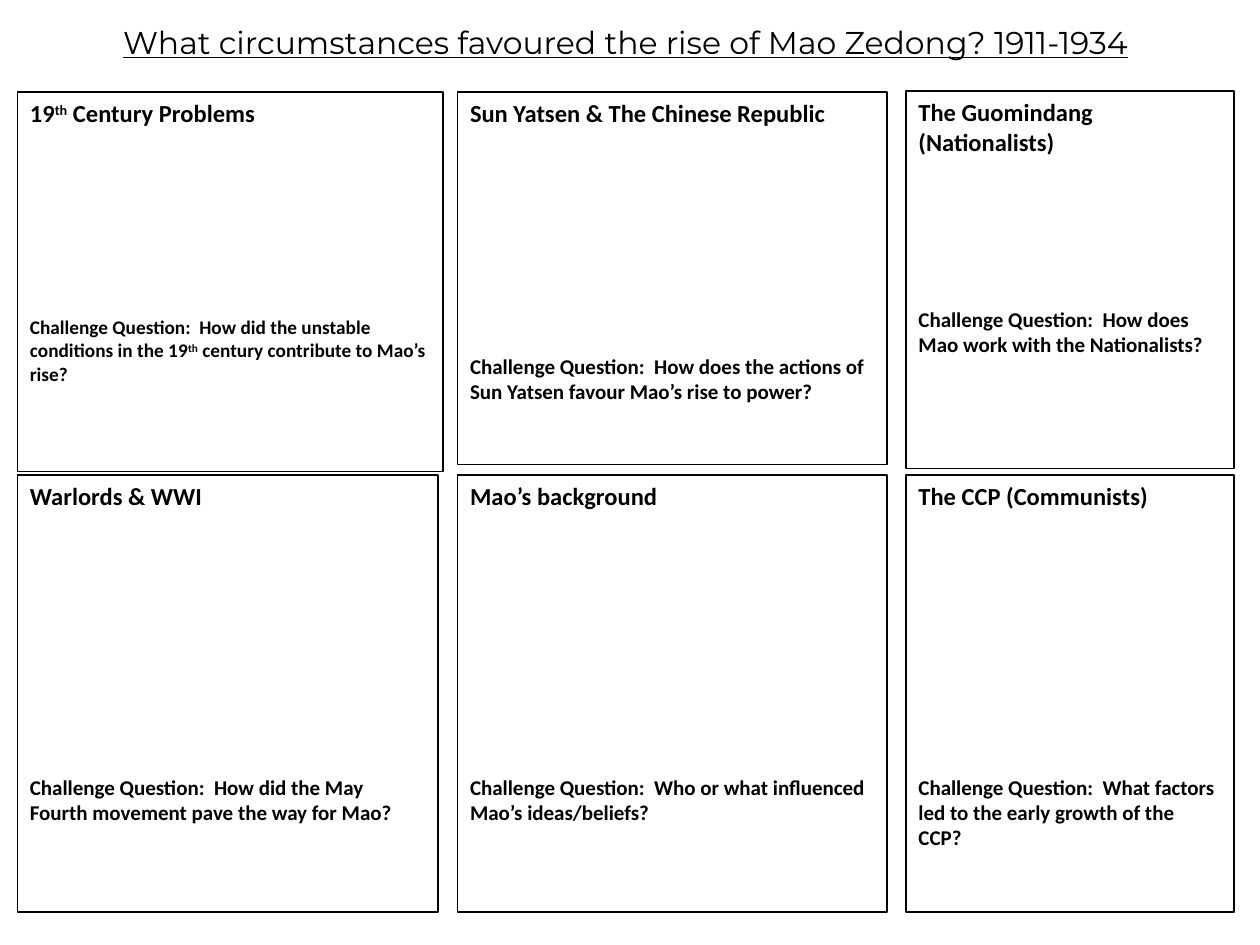
from pptx import Presentation
from pptx.dml.color import RGBColor
from pptx.enum.shapes import MSO_SHAPE as Shape
from pptx.enum.text import MSO_ANCHOR as Anchor, MSO_AUTO_SIZE as AutoSize, PP_ALIGN as Align
from pptx.util import Pt

BLACK = RGBColor(0x00, 0x00, 0x00)
WHITE = RGBColor(0xFF, 0xFF, 0xFF)
NOTE_LINE = 21.5

TOP_ROW, BOTTOM_ROW = 52.5, 271.5
LEFT_COL, MIDDLE_COL, RIGHT_COL = 10, 261.5, 517.75
MIDDLE_WIDTH, RIGHT_WIDTH = 245.5, 187.25
BOTTOM_HEIGHT = 249.75


def add_paragraph_text(paragraph, text, size):
    paragraph.alignment = Align.LEFT
    paragraph.font.name = "Calibri"
    paragraph.font.size = Pt(size)
    paragraph.font.bold = True
    paragraph.font.color.rgb = BLACK
    for index, part in enumerate(text.split("^")):
        run = paragraph.add_run()
        run.text = part
        if index % 2:
            run._r.get_or_add_rPr().set("baseline", "30000")


prs = Presentation()
prs.slide_width, prs.slide_height = Pt(720), Pt(540)
slide = prs.slides.add_slide(prs.slide_layouts[5])

title = slide.shapes.title
title.left, title.top, title.width, title.height = Pt(10), Pt(9.5), Pt(695), Pt(29)
title.text_frame.text = "What circumstances favoured the rise of Mao Zedong? 1911-1934"
title.text_frame.vertical_anchor = Anchor.TOP
title.text_frame.auto_size = AutoSize.NONE
heading_line = title.text_frame.paragraphs[0]
heading_line.alignment = Align.CENTER
heading_line.font.name = "Montserrat"
heading_line.font.size = Pt(18)
heading_line.font.underline = True
heading_line.font.color.rgb = BLACK

topics = [
    (LEFT_COL, TOP_ROW, 243, 217, "19^th^ Century Problems", 5, 11,
     "How did the unstable conditions in the 19^th^ century contribute to Mao’s rise?"),
    (MIDDLE_COL, TOP_ROW, MIDDLE_WIDTH, 213, "Sun Yatsen & The Chinese Republic", 6, 12,
     "How does the actions of Sun Yatsen favour Mao’s rise to power?"),
    (RIGHT_COL, TOP_ROW - 0.5, RIGHT_WIDTH, 215.75, "The Guomindang (Nationalists)", 4, 12,
     "How does Mao work with the Nationalists?"),
    (LEFT_COL, BOTTOM_ROW, 240.5, BOTTOM_HEIGHT, "Warlords & WWI", 7, 12,
     "How did the May Fourth movement pave the way for Mao?"),
    (MIDDLE_COL, BOTTOM_ROW, MIDDLE_WIDTH, BOTTOM_HEIGHT, "Mao’s background", 7, 12,
     "Who or what influenced Mao’s ideas/beliefs?"),
    (RIGHT_COL, BOTTOM_ROW, RIGHT_WIDTH, BOTTOM_HEIGHT, "The CCP (Communists)", 7, 12,
     "What factors led to the early growth of the CCP?"),
]

for left, top, width, height, heading, note_lines, question_size, question in topics:
    box = slide.shapes.add_shape(Shape.RECTANGLE, Pt(left), Pt(top), Pt(width), Pt(height))
    box.shadow.inherit = False
    box.fill.solid()
    box.fill.fore_color.rgb = WHITE
    box.line.color.rgb = BLACK
    box.line.width = Pt(1)
    frame = box.text_frame
    frame.word_wrap = True
    frame.vertical_anchor = Anchor.TOP
    add_paragraph_text(frame.paragraphs[0], heading, 14)
    challenge = frame.add_paragraph()
    challenge.space_before = Pt(note_lines * NOTE_LINE)
    add_paragraph_text(challenge, "Challenge Question:  " + question, question_size)

prs.save("out.pptx")
